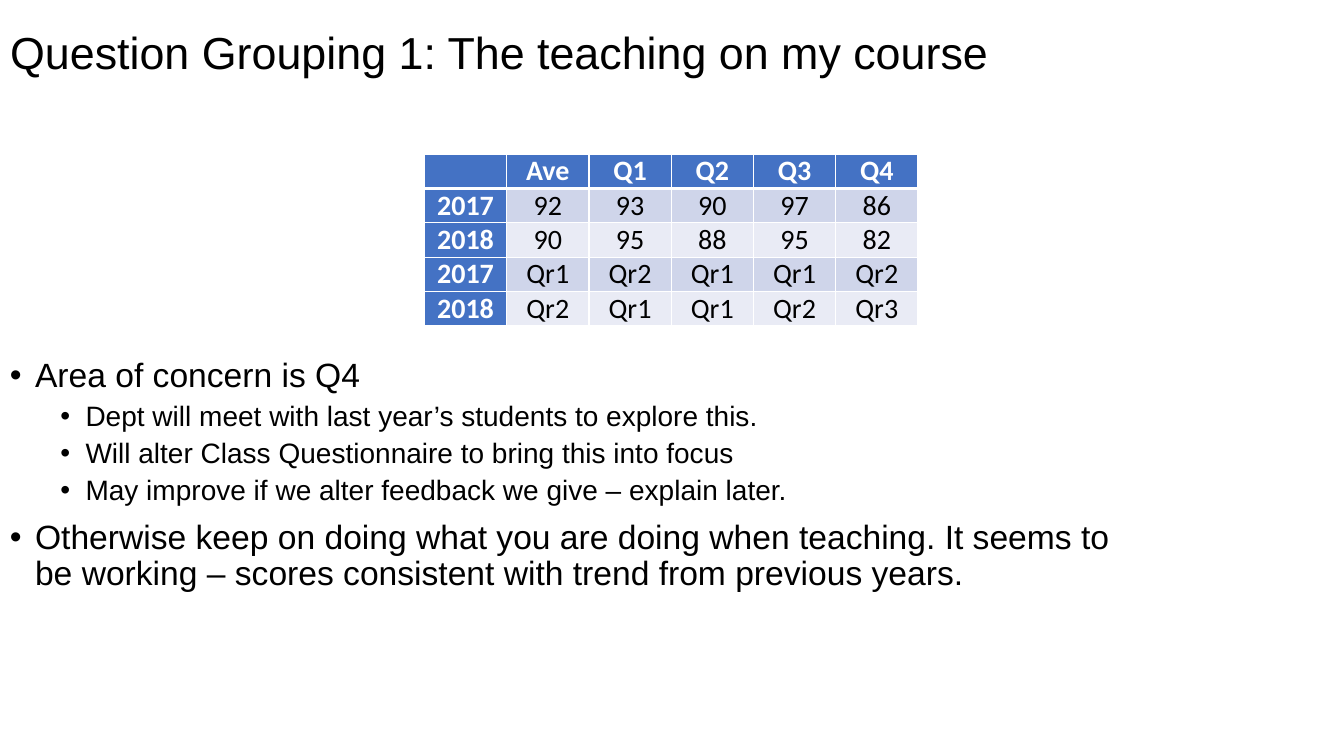
from dataclasses import dataclass

from lxml import etree
from pptx import Presentation
from pptx.dml.color import RGBColor
from pptx.enum.text import MSO_ANCHOR, PP_ALIGN
from pptx.oxml.ns import qn
from pptx.util import Inches, Pt

CENTER, LEFT = PP_ALIGN.CENTER, PP_ALIGN.LEFT
MIDDLE, BOTTOM = MSO_ANCHOR.MIDDLE, MSO_ANCHOR.BOTTOM
TITLE_ONLY = 5


@dataclass(frozen=True)
class Theme:
    text: str = "000000"
    white: str = "FFFFFF"
    header: str = "4472C4"
    bands: tuple = ("CFD5EA", "E9EBF5")
    body_font: str = "Arial"
    table_font: str = "Calibri"
    title_size: int = 32
    bullet_sizes: tuple = (24, 20)
    table_size: int = 20
    line_spacing: float = 0.9


THEME = Theme()

SCORES = [
    ["", "Ave", "Q1", "Q2", "Q3", "Q4"],
    ["2017", "92", "93", "90", "97", "86"],
    ["2018", "90", "95", "88", "95", "82"],
    ["2017", "Qr1", "Qr2", "Qr1", "Qr1", "Qr2"],
    ["2018", "Qr2", "Qr1", "Qr1", "Qr2", "Qr3"],
]

COMMENTS = [
    (0, "Area of concern is Q4"),
    (1, "Dept will meet with last year’s students to explore this."),
    (1, "Will alter Class Questionnaire to bring this into focus"),
    (1, "May improve if we alter feedback we give – explain later."),
    (0, "Otherwise keep on doing what you are doing when teaching. It seems to "
        "be working – scores consistent with trend from previous years."),
]


def add_run(paragraph, text, font, size, color, bold=False):
    run = paragraph.add_run()
    run.text = text
    run.font.name = font
    run.font.size = Pt(size)
    run.font.bold = bold
    run.font.color.rgb = RGBColor.from_string(color)


def place(shape, left, top, width, height):
    shape.left, shape.top = Inches(left), Inches(top)
    shape.width, shape.height = Inches(width), Inches(height)


def set_title(slide, text):
    title = slide.shapes.title
    place(title, 0, 0, 13.33, 1.09)
    title.text_frame.vertical_anchor = MIDDLE
    paragraph = title.text_frame.paragraphs[0]
    paragraph.alignment = LEFT
    paragraph.line_spacing = THEME.line_spacing
    add_run(paragraph, text, THEME.body_font, THEME.title_size, THEME.text)


def set_borders(cell, top, bottom):
    properties = cell._tc.get_or_add_tcPr()
    for side, width in (("L", 1), ("R", 1), ("T", top), ("B", bottom)):
        line = etree.SubElement(properties, qn(f"a:ln{side}"), w=str(Pt(width)))
        fill = etree.SubElement(line, qn("a:solidFill"))
        etree.SubElement(fill, qn("a:srgbClr"), val=THEME.white)


def format_cell(cell, text, row, column):
    heading = row == 0 or column == 0
    cell.margin_left = cell.margin_right = Inches(0.07)
    cell.margin_top = cell.margin_bottom = 0
    cell.vertical_anchor = BOTTOM
    set_borders(cell, 3 if row == 1 else 1, 3 if row == 0 else 1)
    cell.fill.solid()
    fill = THEME.header if heading else THEME.bands[(row - 1) % 2]
    cell.fill.fore_color.rgb = RGBColor.from_string(fill)
    if text:
        paragraph = cell.text_frame.paragraphs[0]
        paragraph.alignment = CENTER
        color = THEME.white if heading else THEME.text
        add_run(paragraph, text, THEME.table_font, THEME.table_size, color, heading)


def add_score_table(slide, scores):
    column_width, row_height = 0.816, 0.34
    rows, columns = len(scores), len(scores[0])
    table = slide.shapes.add_table(
        rows, columns, Inches(4.21), Inches(1.53),
        Inches(columns * column_width), Inches(rows * row_height)).table
    table.first_col = True
    for column in table.columns:
        column.width = Inches(column_width)
    for row, values in enumerate(scores):
        table.rows[row].height = Inches(row_height)
        for column, text in enumerate(values):
            format_cell(table.cell(row, column), text, row, column)


def add_bullet(paragraph, level, text):
    paragraph.level = level
    paragraph.line_spacing = THEME.line_spacing
    paragraph.space_before = Pt(5 if level else 10)
    properties = paragraph._p.get_or_add_pPr()
    properties.set("marL", str(Inches(0.25 + 0.5 * level)))
    properties.set("indent", str(Inches(-0.25)))
    etree.SubElement(properties, qn("a:buFont"), typeface=THEME.body_font)
    etree.SubElement(properties, qn("a:buChar"), char="•")
    add_run(paragraph, text, THEME.body_font, THEME.bullet_sizes[level], THEME.text)


def add_comments(slide, comments):
    box = slide.shapes.add_textbox(Inches(0), Inches(3.51), Inches(11.5), Inches(3.34))
    frame = box.text_frame
    frame.word_wrap = True
    for index, (level, text) in enumerate(comments):
        paragraph = frame.add_paragraph() if index else frame.paragraphs[0]
        add_bullet(paragraph, level, text)


def main():
    presentation = Presentation()
    presentation.slide_width = Inches(13.33)
    presentation.slide_height = Inches(7.5)
    slide = presentation.slides.add_slide(presentation.slide_layouts[TITLE_ONLY])
    set_title(slide, "Question Grouping 1: The teaching on my course")
    add_score_table(slide, SCORES)
    add_comments(slide, COMMENTS)
    presentation.save("out.pptx")


if __name__ == "__main__":
    main()
